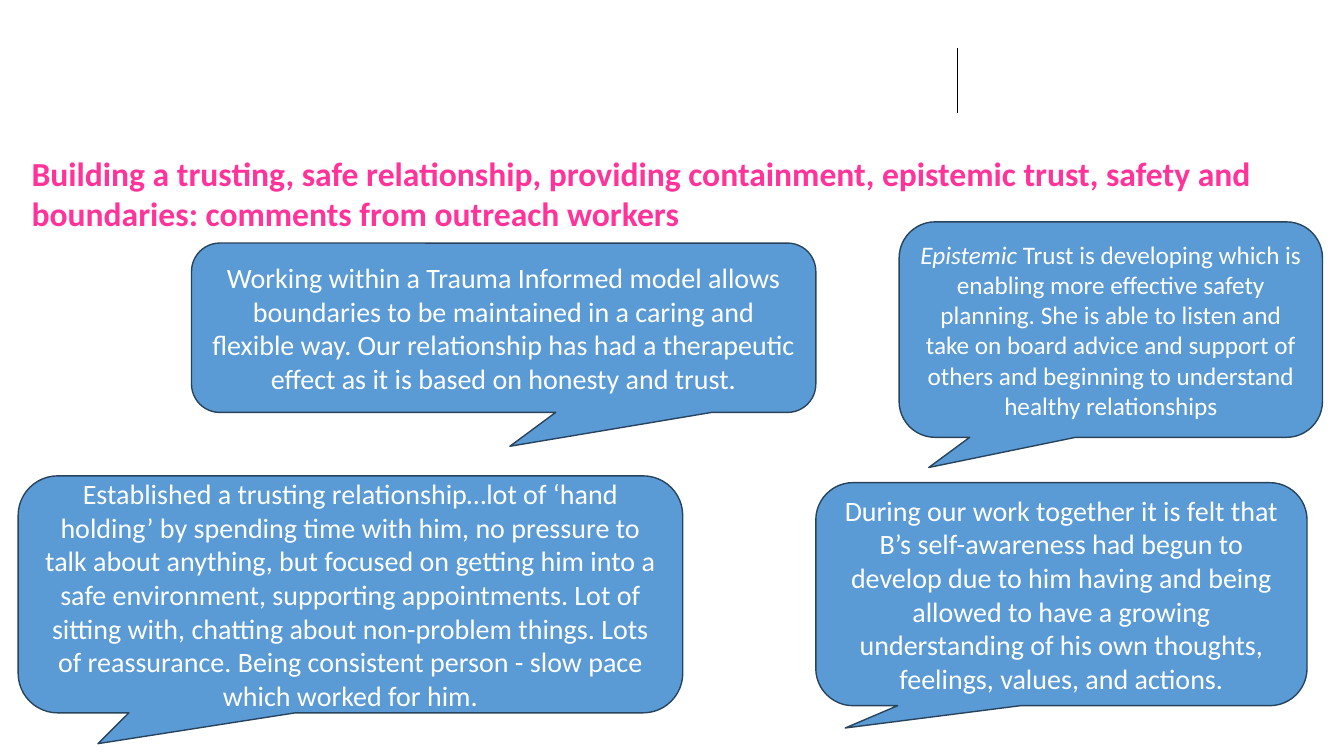
from pptx import Presentation
from pptx.dml.color import RGBColor
from pptx.enum.shapes import MSO_CONNECTOR, MSO_SHAPE
from pptx.enum.text import MSO_ANCHOR, MSO_AUTO_SIZE, PP_ALIGN
from pptx.oxml.ns import qn
from pptx.util import Inches, Pt
from lxml import etree

CALLOUT = MSO_SHAPE.ROUNDED_RECTANGULAR_CALLOUT
STRAIGHT = MSO_CONNECTOR.STRAIGHT
TOP, MIDDLE = MSO_ANCHOR.TOP, MSO_ANCHOR.MIDDLE
LEFT, CENTER = PP_ALIGN.LEFT, PP_ALIGN.CENTER
NO_AUTOFIT = MSO_AUTO_SIZE.NONE
TITLE_ONLY = 5
CORNER = 0.167

TITLE = ("Building a trusting, safe relationship, providing containment, epistemic "
         "trust, safety and boundaries: comments from outreach workers")

# box (left, top, width, height in % of the slide), tail tip, size, italic lead, text
COMMENTS = [
    ((66.9, 29.35, 31.5, 28.5), (-0.43, 0.64), 18, "Epistemic",
     " Trust is developing which is enabling more effective safety planning. She is "
     "able to listen and take on board advice and support of others and beginning to "
     "understand healthy relationships"),
    ((14.25, 32.15, 46.45, 22.4), (0.01, 0.7), 20, "",
     "Working within a Trauma Informed model allows boundaries to be maintained in a "
     "caring and flexible way. Our relationship has had a therapeutic effect as it is "
     "based on honesty and trust."),
    ((1.35, 62.95, 49.45, 31.35), (-0.38, 0.63), 20, "",
     "Established a trusting relationship…lot of ‘hand holding’ by spending time with "
     "him, no pressure to talk about anything, but focused on getting him into a safe "
     "environment, supporting appointments. Lot of sitting with, chatting about "
     "non-problem things. Lots of reassurance. Being consistent person - slow pace "
     "which worked for him."),
    ((60.7, 63.85, 36.55, 29.5), (-0.44, 0.6), 20, "",
     "During our work together it is felt that B’s self-awareness had begun to develop "
     "due to him having and being allowed to have a growing understanding of his own "
     "thoughts, feelings, values, and actions."),
]


class CommentSlide:
    """Draws on one slide; every length is a percentage of the slide's size."""

    FONT = "Calibri"
    COLORS = {"title": "FF3399", "bubble": "5B9BD5", "outline": "28445D",
              "text": "FFFFFF", "rule": "000000"}

    def __init__(self, presentation):
        self.width = presentation.slide_width
        self.height = presentation.slide_height
        self.slide = presentation.slides.add_slide(presentation.slide_layouts[TITLE_ONLY])

    def color(self, name):
        return RGBColor.from_string(self.COLORS[name])

    def place(self, x, y):
        return round(self.width * x / 100), round(self.height * y / 100)

    def format_runs(self, paragraph, size, color, bold=False):
        for run in paragraph.runs:
            run.font.name = self.FONT
            run.font.size = Pt(size)
            run.font.bold = bold
            run.font.color.rgb = self.color(color)

    def title(self, text, left, top, width, height):
        shape = self.slide.shapes.title
        shape.left, shape.top = self.place(left, top)
        shape.width, shape.height = self.place(width, height)
        frame = shape.text_frame
        frame.text = text
        frame.word_wrap = True
        frame.auto_size = NO_AUTOFIT
        frame.vertical_anchor = TOP
        paragraph = frame.paragraphs[0]
        paragraph.alignment = LEFT
        self.format_runs(paragraph, 24, "title", bold=True)

    def rule(self, x, top, bottom):
        line = self.slide.shapes.add_connector(
            STRAIGHT, *self.place(x, top), *self.place(x, bottom))
        line.line.color.rgb = self.color("rule")
        line.line.width = Pt(0.5)
        etree.SubElement(line._element.spPr, qn("a:effectLst"))

    def callout(self, box, tail, size, lead, text):
        left, top, width, height = box
        shape = self.slide.shapes.add_shape(
            CALLOUT, *self.place(left, top), *self.place(width, height))
        for index, value in enumerate((*tail, CORNER)):
            shape.adjustments[index] = value
        shape.shadow.inherit = False
        shape.fill.solid()
        shape.fill.fore_color.rgb = self.color("bubble")
        shape.line.color.rgb = self.color("outline")
        shape.line.width = Pt(1)
        frame = shape.text_frame
        frame.word_wrap = True
        frame.vertical_anchor = MIDDLE
        paragraph = frame.paragraphs[0]
        paragraph.alignment = CENTER
        if lead:
            paragraph.text = lead
            paragraph.runs[0].font.italic = True
        paragraph.add_run().text = text
        self.format_runs(paragraph, size, "text")


def main():
    presentation = Presentation()
    presentation.slide_width = Inches(13.33)
    presentation.slide_height = Inches(7.5)
    slide = CommentSlide(presentation)
    slide.rule(71.25, 6.4, 14.9)
    slide.title(TITLE, 1.6, 19.5, 98.4, 16.65)
    for comment in COMMENTS:
        slide.callout(*comment)
    presentation.save("out.pptx")


if __name__ == "__main__":
    main()
